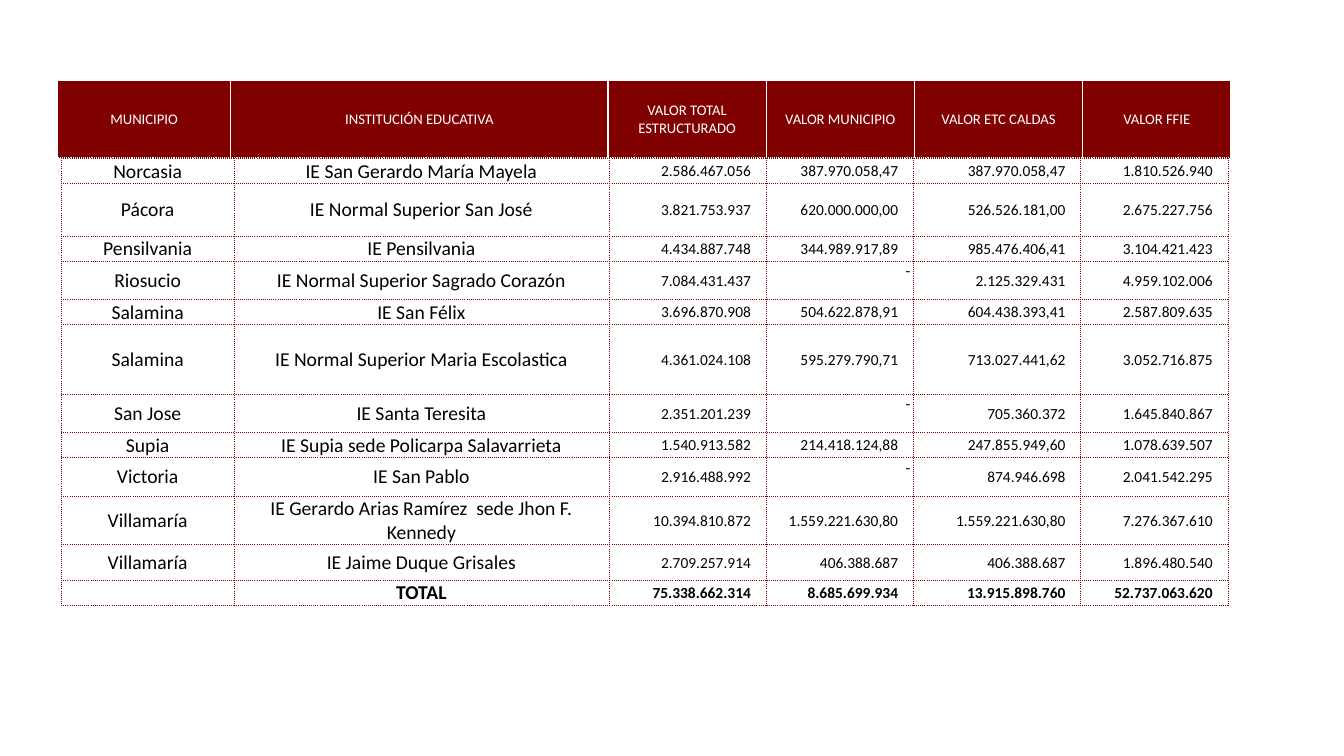
from lxml.etree import SubElement
from pptx import Presentation
from pptx.dml.color import RGBColor
from pptx.enum.text import MSO_ANCHOR as Anchor, PP_ALIGN as Align
from pptx.oxml import parse_xml
from pptx.oxml.ns import nsdecls, qn
from pptx.util import Inches, Pt

MAROON, WHITE, BLACK = "800000", "FFFFFF", "000000"
FONT = "Calibri"
PLAIN_STYLE = "{2D5ABB26-0587-4C30-8999-92F81FD0307C}"

# Content
HEADINGS = ["MUNICIPIO", "INSTITUCIÓN EDUCATIVA", "VALOR TOTAL ESTRUCTURADO",
            "VALOR MUNICIPIO", "VALOR ETC CALDAS", "VALOR FFIE"]
SCHOOLS = [
    ("Norcasia", "IE San Gerardo María Mayela",
     "2.586.467.056", "387.970.058,47", "387.970.058,47", "1.810.526.940"),
    ("Pácora", "IE Normal Superior San José",
     "3.821.753.937", "620.000.000,00", "526.526.181,00", "2.675.227.756"),
    ("Pensilvania", "IE Pensilvania",
     "4.434.887.748", "344.989.917,89", "985.476.406,41", "3.104.421.423"),
    ("Riosucio", "IE Normal Superior Sagrado Corazón",
     "7.084.431.437", "-", "2.125.329.431", "4.959.102.006"),
    ("Salamina", "IE San Félix",
     "3.696.870.908", "504.622.878,91", "604.438.393,41", "2.587.809.635"),
    ("Salamina", "IE Normal Superior Maria Escolastica",
     "4.361.024.108", "595.279.790,71", "713.027.441,62", "3.052.716.875"),
    ("San Jose", "IE Santa Teresita",
     "2.351.201.239", "-", "705.360.372", "1.645.840.867"),
    ("Supia", "IE Supia sede Policarpa Salavarrieta",
     "1.540.913.582", "214.418.124,88", "247.855.949,60", "1.078.639.507"),
    ("Victoria", "IE San Pablo",
     "2.916.488.992", "-", "874.946.698", "2.041.542.295"),
    ("Villamaría", "IE Gerardo Arias Ramírez  sede Jhon F. Kennedy",
     "10.394.810.872", "1.559.221.630,80", "1.559.221.630,80", "7.276.367.610"),
    ("Villamaría", "IE Jaime Duque Grisales",
     "2.709.257.914", "406.388.687", "406.388.687", "1.896.480.540"),
    ("", "TOTAL",
     "75.338.662.314", "8.685.699.934", "13.915.898.760", "52.737.063.620"),
]

# Grid, in inches
HEADER_COLUMNS = [1.72, 3.74, 1.57, 1.47, 1.67, 1.47]
BODY_COLUMNS = [width - 0.01 for width in HEADER_COLUMNS]
BODY_COLUMNS[1] -= 0.01
LINE, DASH = 0.25, 0.38
BODY_ROWS = [LINE, 0.52, LINE, DASH, LINE, 0.69, DASH, LINE, DASH, 0.48, 0.35, LINE]
INSET, NUMBER_INSET, DASH_INSET = 0.01, 0.15, 0.03

WHITE_EDGE = (WHITE, 1, "solid")
DOTTED_EDGE = (MAROON, 0.5, "sysDot")
HEADER_EDGES = {"L": WHITE_EDGE, "R": WHITE_EDGE, "B": DOTTED_EDGE}
BODY_EDGES = dict.fromkeys("LRTB", DOTTED_EDGE)


def color(value):
    return RGBColor.from_string(value)


def add_grid(slide, left, top, columns, rows):
    frame = slide.shapes.add_table(len(rows), len(columns), Inches(left), Inches(top),
                                   Inches(sum(columns)), Inches(sum(rows)))
    table = frame.table
    table.first_row = table.horz_banding = False
    table._tbl.tblPr.find(qn("a:tableStyleId")).text = PLAIN_STYLE
    for column, width in zip(table.columns, columns):
        column.width = Inches(width)
    for row, height in zip(table.rows, rows):
        row.height = Inches(height)
    return table


def set_edges(cell, edges):
    properties = cell._tc.get_or_add_tcPr()
    for index, (side, (tint, width, dash)) in enumerate(edges.items()):
        properties.insert(index, parse_xml(
            f'<a:ln{side} {nsdecls("a")} w="{Pt(width)}"><a:solidFill>'
            f'<a:srgbClr val="{tint}"/></a:solidFill><a:prstDash val="{dash}"/></a:ln{side}>'))


def fill_cell(cell, text, size, tint, edges, align=Align.CENTER, right=INSET,
              anchor=Anchor.MIDDLE, bold=False):
    cell.margin_left = cell.margin_top = Inches(INSET)
    cell.margin_right, cell.margin_bottom = Inches(right), 0
    cell.vertical_anchor = anchor
    cell.text = text
    paragraph = cell.text_frame.paragraphs[0]
    paragraph.alignment = align
    font = paragraph.font
    font.name, font.size, font.bold = FONT, Pt(size), bold
    font.color.rgb = color(tint)
    if not text:  # keeps the empty cell from stretching its row
        SubElement(paragraph._p, qn("a:endParaRPr"), sz=str(size * 100))
    set_edges(cell, edges)


def main():
    presentation = Presentation()
    presentation.slide_width, presentation.slide_height = Inches(13.33), Inches(7.5)
    slide = presentation.slides.add_slide(presentation.slide_layouts[6])

    # Header band
    header = add_grid(slide, 0.57, 0.8, HEADER_COLUMNS, [0.76])
    for index, heading in enumerate(HEADINGS):
        cell = header.cell(0, index)
        cell.fill.solid()
        cell.fill.fore_color.rgb = color(MAROON)
        fill_cell(cell, heading, 10.5, WHITE, HEADER_EDGES)

    # Schools and total
    body = add_grid(slide, 0.61, 1.57, BODY_COLUMNS, BODY_ROWS)
    for row, school in enumerate(SCHOOLS):
        bold = row == len(SCHOOLS) - 1
        for column, text in enumerate(school):
            cell = body.cell(row, column)
            cell.fill.background()
            if column < 2:
                fill_cell(cell, text, 14 if text else 11, BLACK, BODY_EDGES, bold=bold)
            elif text == "-":
                fill_cell(cell, text, 11, BLACK, BODY_EDGES, Align.RIGHT,
                          DASH_INSET, Anchor.TOP)
            else:
                fill_cell(cell, text, 11, BLACK, BODY_EDGES, Align.RIGHT,
                          NUMBER_INSET, bold=bold)

    presentation.save("out.pptx")


if __name__ == "__main__":
    main()
